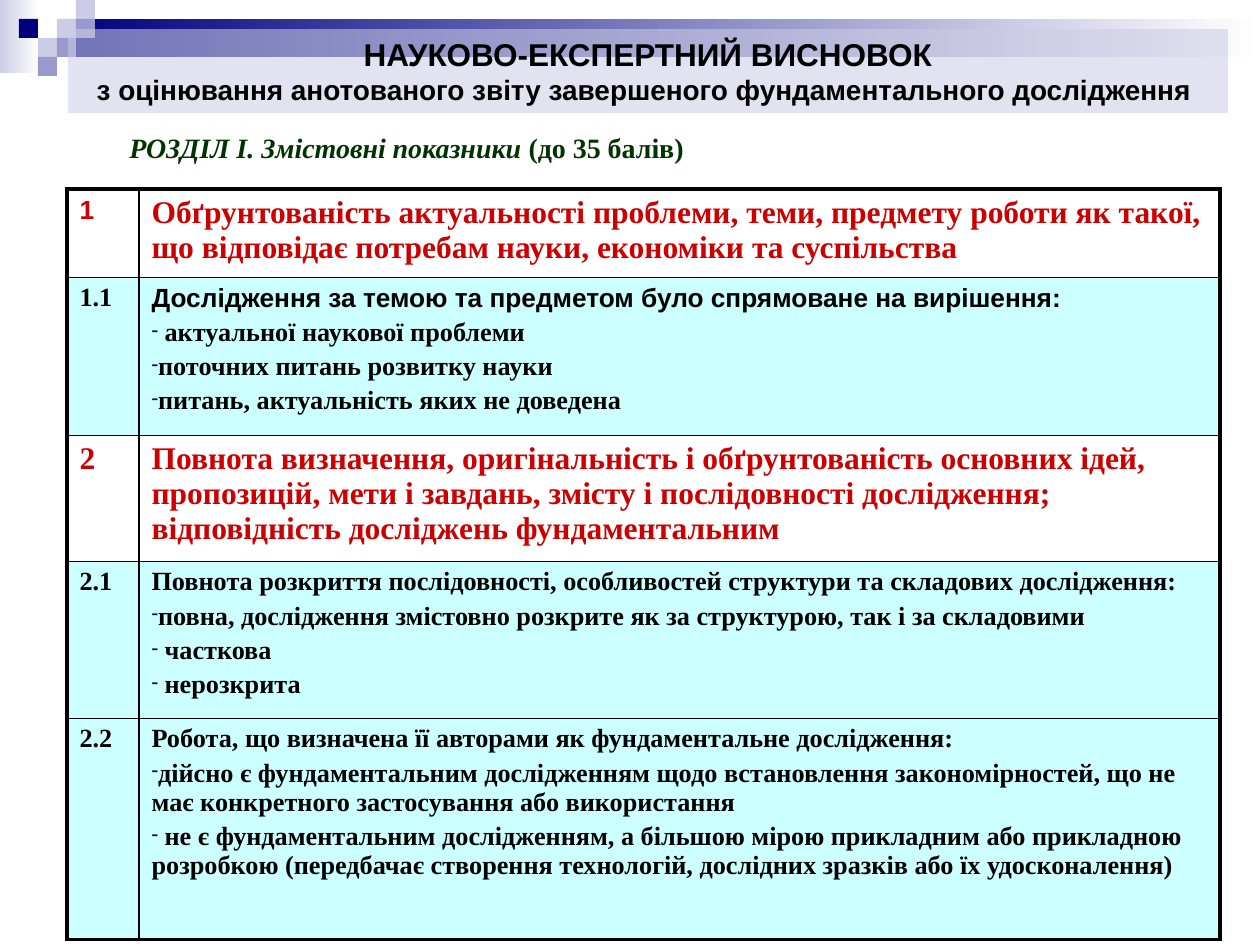
import dataclasses

import pptx
import pptx.dml.color
import pptx.enum.shapes
import pptx.enum.text
import pptx.oxml
import pptx.oxml.ns
import pptx.util
from lxml import etree


@dataclasses.dataclass(frozen=True)
class Theme:
    black: str = "000000"
    white: str = "FFFFFF"
    navy: str = "00007D"
    violet: str = "9999CC"
    lavender: str = "CCCCE6"
    red: str = "CC0000"
    green: str = "003300"
    aqua: str = "CCFFFF"
    sans: str = "Arial"
    serif: str = "Times New Roman"
    large: int = 18
    medium: int = 16
    small: int = 15
    thick: float = 2.25
    thin: float = 1


THEME = Theme()
ANCHOR = pptx.enum.text.MSO_ANCHOR
ALIGN = pptx.enum.text.PP_ALIGN


def px(length):
    return pptx.util.Emu(round(length * 914400 / 126))


def rgb(color):
    return pptx.dml.color.RGBColor.from_string(color)


def child(parent, tag, **attributes):
    return etree.SubElement(parent, pptx.oxml.ns.qn(tag), attributes)


def write(paragraph, text, *, font=THEME.serif, size=THEME.small, color=THEME.black,
          italic=False, align=None, before=None, bullet=None):
    """Add one bold run to a paragraph and format both."""
    run = paragraph.add_run()
    run.text = text
    run.font.name, run.font.size = font, pptx.util.Pt(size)
    run.font.bold, run.font.italic = True, italic
    run.font.color.rgb = rgb(color)
    if align is not None:
        paragraph.alignment = align
    if before is not None:
        paragraph.space_before = pptx.util.Pt(before)
    if bullet:
        properties = paragraph._p.get_or_add_pPr()
        properties.set("marL", "0")
        properties.set("indent", "0")
        child(child(properties, "a:buClr"), "a:srgbClr", val=THEME.navy)
        child(properties, "a:buSzPct", val="75000")
        child(properties, "a:buChar", char=bullet)


class SlideBuilder:
    def __init__(self, theme, slide):
        self.theme = theme
        self.slide = slide

    def rectangle(self, left, top, width, height, color, fade=False, opacity=None):
        shape = self.slide.shapes.add_shape(
            pptx.enum.shapes.MSO_SHAPE.RECTANGLE, px(left), px(top), px(width), px(height))
        shape.shadow.inherit = False
        shape.line.fill.background()
        if fade:
            shape.fill.gradient()
            shape.fill.gradient_angle = 0
            for stop, stop_color in zip(shape.fill.gradient_stops, (color, self.theme.white)):
                stop.color.rgb = rgb(stop_color)
        else:
            shape.fill.solid()
            shape.fill.fore_color.rgb = rgb(color)
        if opacity:
            solid = shape.fill._xPr.find(pptx.oxml.ns.qn("a:solidFill"))
            child(solid[0], "a:alpha", val=str(opacity * 1000))
        return shape

    def text_box(self, left, top, width, height):
        frame = self.slide.shapes.add_textbox(px(left), px(top), px(width), px(height)).text_frame
        frame.word_wrap = True
        frame.vertical_anchor = ANCHOR.MIDDLE
        return frame

    def table(self, left, top, columns, rows):
        table = self.slide.shapes.add_table(
            len(rows), len(columns), px(left), px(top), px(sum(columns)), px(sum(rows))).table
        table.first_row = table.horz_banding = False
        for column, width in zip(table.columns, columns):
            column.width = px(width)
        for row, height in zip(table.rows, rows):
            row.height = px(height)
        return table

    def cell(self, table, row, column, color, lines):
        """Fill one cell with (text, format) lines and draw its borders."""
        cell = table.cell(row, column)
        cell.fill.solid()
        cell.fill.fore_color.rgb = rgb(color)
        last_row, last_column = len(table.rows) - 1, len(table.columns) - 1
        outer = {"L": column == 0, "R": column == last_column,
                 "T": row == 0, "B": row == last_row}
        properties = cell._tc.get_or_add_tcPr()
        for position, (side, is_outer) in enumerate(outer.items()):
            width = self.theme.thick if is_outer else self.theme.thin
            border = child(properties, f"a:ln{side}", w=str(pptx.util.Pt(width)))
            child(child(border, "a:solidFill"), "a:srgbClr", val=self.theme.black)
            properties.insert(position, border)
        frame = cell.text_frame
        for index, (text, style) in enumerate(lines):
            paragraph = frame.add_paragraph() if index else frame.paragraphs[0]
            size = style.get("size", self.theme.small)
            write(paragraph, text, before=0.2 * size, **style)


SECTION = {"size": THEME.large, "color": THEME.red}

# Number, number format, heading, heading format, options, row height
CRITERIA = [
    ("1", {"font": THEME.sans, "color": THEME.red},
     "Обґрунтованість актуальності проблеми, теми, предмету роботи як такої, "
     "що відповідає потребам науки, економіки та суспільства", SECTION, [], 88),
    ("1.1", {}, "Дослідження за темою та предметом було спрямоване на вирішення:",
     {"font": THEME.sans},
     [" актуальної наукової проблеми",
      "поточних питань розвитку науки",
      "питань, актуальність яких не доведена"], 158),
    ("2", SECTION,
     "Повнота визначення, оригінальність і обґрунтованість основних ідей, "
     "пропозицій, мети і завдань, змісту і послідовності дослідження; "
     "відповідність досліджень фундаментальним", SECTION, [], 126),
    ("2.1", {},
     "Повнота розкриття послідовності, особливостей структури та складових дослідження:", {},
     ["повна, дослідження змістовно розкрите як за структурою, так і за складовими",
      " часткова",
      " нерозкрита"], 157),
    ("2.2", {}, "Робота, що визначена її авторами як фундаментальне дослідження:", {},
     ["дійсно є фундаментальним дослідженням щодо встановлення закономірностей, "
      "що не має конкретного застосування або використання",
      " не є фундаментальним дослідженням, а більшою мірою прикладним або прикладною "
      "розробкою (передбачає створення технологій, дослідних зразків або їх "
      "удосконалення)"], 221),
]


def main():
    presentation = pptx.Presentation()
    presentation.slide_width, presentation.slide_height = px(1260), px(945)
    slide = presentation.slides.add_slide(presentation.slide_layouts[6])
    builder = SlideBuilder(THEME, slide)

    # Corner decoration: two fading bands and squares on a grid
    builder.rectangle(0, 0, 39, 73, THEME.lavender, fade=True)
    builder.rectangle(57, 19, 1203, 38, THEME.navy, fade=True)
    square = 19
    for column, row, color in [
        (3, 1, THEME.lavender), (4, 0, THEME.lavender), (4, 1, THEME.violet),
        (2, 2, THEME.lavender), (1, 1, THEME.navy), (3, 2, THEME.violet),
        (2, 3, THEME.violet),
    ]:
        builder.rectangle(column * square, row * square, square, square, color)

    # Section heading
    heading = builder.text_box(117, 124, 697, 47).paragraphs[0]
    style = {"size": THEME.medium, "color": THEME.green}
    write(heading, "РОЗДІЛ І. Змістовні показники ", italic=True, **style)
    write(heading, "(до 35 балів)", **style)

    # Criteria table
    table = builder.table(67, 189, [72, 1081], [criterion[-1] for criterion in CRITERIA])
    for row, (number, number_style, title, title_style, options, _) in enumerate(CRITERIA):
        color = THEME.aqua if "." in number else THEME.white
        builder.cell(table, row, 0, color, [(number, number_style)])
        lines = [(title, title_style)] + [(option, {"bullet": "-"}) for option in options]
        builder.cell(table, row, 1, color, lines)

    # Title band
    frame = builder.rectangle(68, 29, 1160, 84, THEME.lavender, opacity=56).text_frame
    frame.word_wrap = True
    frame.vertical_anchor = ANCHOR.TOP
    style = {"font": THEME.sans, "align": ALIGN.CENTER}
    write(frame.paragraphs[0], "НАУКОВО-ЕКСПЕРТНИЙ ВИСНОВОК", size=THEME.large, **style)
    write(frame.add_paragraph(),
          "з оцінювання анотованого звіту завершеного фундаментального дослідження ",
          size=THEME.medium, **style)

    presentation.save("out.pptx")


if __name__ == "__main__":
    main()
